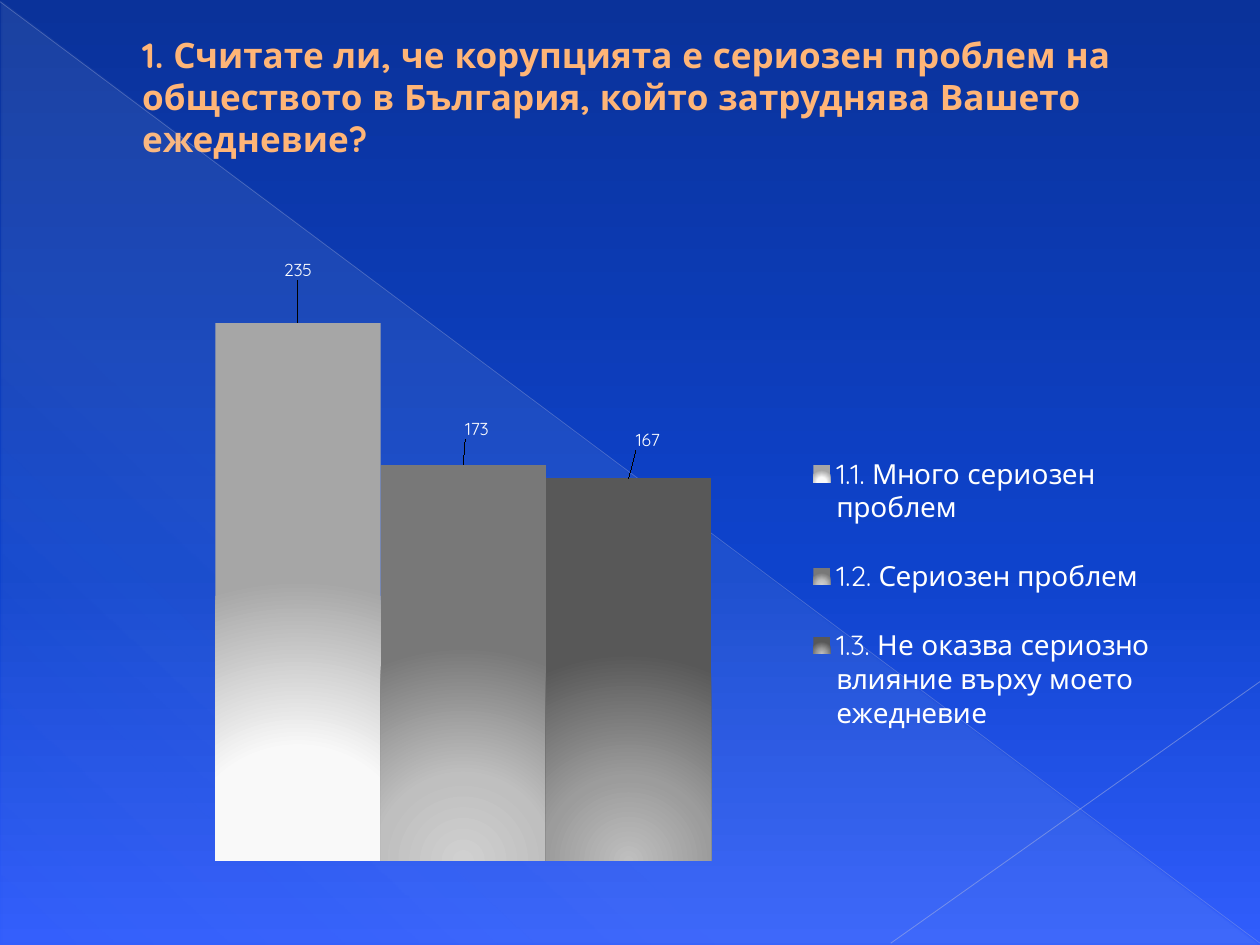
from lxml import etree
from pptx import Presentation
from pptx.chart import data as chart_data
from pptx.dml import color as dml
from pptx.enum import chart as chart_enum, shapes, text
from pptx.oxml import parse_xml
from pptx.oxml.ns import nsdecls, qn
from pptx.util import Pt

FONT = "Quicksand"
COLORS = {
    "title": "FFB577",
    "text": "FFFFFF",
    "glow": "CCDDEA",
    "long_line": "ADB6DC",
    "short_line": "B7BEDF",
}
BACKGROUND = [(0, "0A329A", 100), (60, "0E43CC", 100), (100, "315DFC", 100)]
GLOW = [(0, COLORS["glow"], 10), (70, COLORS["glow"], 8), (100, COLORS["glow"], 1)]
QUESTION = (
    "1.\u00a0Считате ли, че корупцията е сериозен проблем на обществото "
    "в България, който затруднява Вашето ежедневие?"
)
# name, value, gradient colours from the foot upwards, label shift (x, y)
ANSWERS = [
    ("1.1. Много сериозен проблем", 235, ("F9F9F9", "F9F9F9", "A6A6A6"), (0, -0.06)),
    ("1.2. Сериозен проблем", 173, ("D0D0D0", "BFBFBF", "787878"), (0.012, -0.033)),
    ("1.3. Не оказва сериозно влияние върху моето ежедневие", 167,
     ("BFBFBF", "9C9C9C", "585858"), (0.017, -0.037)),
]


def rgb(hex_color):
    return dml.RGBColor.from_string(hex_color)


def set_gradient(fill, element, stops, angle=None):
    """Fill with (position, colour, opacity) stops; radial from the foot without an angle."""
    fill.solid()
    solid = element.find(".//" + qn("a:solidFill"))
    stop_xml = "".join(
        f'<a:gs pos="{position * 1000}"><a:srgbClr val="{color}">'
        f'<a:alpha val="{opacity * 1000}"/></a:srgbClr></a:gs>'
        for position, color, opacity in stops
    )
    if angle is None:
        direction = ('<a:path path="circle"><a:fillToRect l="50000" t="100000" '
                     'r="50000" b="0"/></a:path>')
    else:
        direction = f'<a:lin ang="{angle * 60000}" scaled="0"/>'
    gradient = parse_xml(
        f'<a:gradFill {nsdecls("a")} rotWithShape="1"><a:gsLst>{stop_xml}</a:gsLst>'
        f"{direction}</a:gradFill>"
    )
    solid.getparent().replace(solid, gradient)


def manual_layout(x, y, width=None, height=None, inner=False, edge=True):
    """Chart layout in fractions; without edge, x and y shift the default place."""
    parts = [("layoutTarget", "inner")] if inner else []
    if edge:
        parts += [("xMode", "edge"), ("yMode", "edge")]
    parts += [("x", x), ("y", y)]
    if width is not None:
        parts += [("w", width), ("h", height)]
    body = "".join(f'<c:{name} val="{value}"/>' for name, value in parts)
    return parse_xml(
        f'<c:layout {nsdecls("c")}><c:manualLayout>{body}</c:manualLayout></c:layout>'
    )


def add_thin_line(slide, start, end, color, width, opacity):
    line = slide.shapes.add_connector(
        shapes.MSO_CONNECTOR.STRAIGHT, *[Pt(value) for value in (*start, *end)]
    )
    line.line.color.rgb = rgb(color)
    line.line.width = Pt(width)
    properties = line._element.spPr
    alpha = etree.SubElement(properties.find(".//" + qn("a:srgbClr")), qn("a:alpha"))
    alpha.set("val", str(opacity * 1000))
    etree.SubElement(properties, qn("a:effectLst"))


def add_backdrop(slide, left, top, width, height):
    set_gradient(slide.background.fill, slide.element, BACKGROUND, 90)
    triangle = slide.shapes.add_shape(
        shapes.MSO_SHAPE.RIGHT_TRIANGLE,
        Pt(left + 1), Pt(top + 1), Pt(width - 2), Pt(height - 1),
    )
    triangle.shadow.inherit = False
    triangle.line.fill.background()
    set_gradient(triangle.fill, triangle._element, GLOW, 133)
    right, bottom = left + width, top + height
    add_thin_line(slide, (left, top + 1), (right, bottom - 1),
                  COLORS["long_line"], 0.39, 35)
    add_thin_line(slide, (right, top + 389.5), (left + 509, bottom - 1),
                  COLORS["short_line"], 0.47, 45)


def place_title(slide, left, top, width, height):
    title = slide.shapes.title
    title.left, title.top = Pt(left), Pt(top)
    title.width, title.height = Pt(width), Pt(height)
    frame = title.text_frame
    frame.text = QUESTION
    frame.word_wrap = True
    frame.auto_size = text.MSO_AUTO_SIZE.NONE
    frame.vertical_anchor = text.MSO_ANCHOR.MIDDLE
    paragraph = frame.paragraphs[0]
    paragraph.alignment = text.PP_ALIGN.LEFT
    indents = paragraph._p.get_or_add_pPr()
    indents.set("marL", str(Pt(38)))
    indents.set("indent", "0")
    font = paragraph.runs[0].font
    font.name, font.size, font.bold = FONT, Pt(20), True
    font.color.rgb = rgb(COLORS["title"])


def style_font(font, size):
    font.name, font.size = FONT, Pt(size)
    font.color.rgb = rgb(COLORS["text"])


def style_series(series, colors, label_shift):
    stops = [(position, color, 100) for position, color in zip((0, 40, 100), colors)]
    set_gradient(series.format.fill, series._element, stops)
    series.format.line.fill.background()
    series.invert_if_negative = False
    series.data_labels.show_value = True
    series.points[0].data_label.position = chart_enum.XL_LABEL_POSITION.OUTSIDE_END
    label = series._element.find(".//" + qn("c:dLbl"))
    label.find(qn("c:idx")).addnext(manual_layout(*label_shift, edge=False))


def add_answer_chart(slide, left, top, width, height):
    answers = chart_data.CategoryChartData()
    answers.categories = ["1"]
    for name, value, _, _ in ANSWERS:
        answers.add_series(name, [value])
    chart = slide.shapes.add_chart(
        chart_enum.XL_CHART_TYPE.COLUMN_CLUSTERED,
        Pt(left), Pt(top), Pt(width), Pt(height), answers,
    ).chart
    chart.has_title = False
    style_font(chart.font, 10)

    chart.category_axis.visible = False
    value_axis = chart.value_axis
    value_axis.visible = False
    value_axis.has_major_gridlines = False
    value_axis.minimum_scale, value_axis.maximum_scale = 0, 250

    plot = chart.plots[0]
    plot.gap_width, plot.overlap = 150, 0
    plot.vary_by_categories = False
    for series, (_, _, colors, label_shift) in zip(plot.series, ANSWERS):
        style_series(series, colors, label_shift)

    plot_area = chart._chartSpace.find(".//" + qn("c:plotArea"))
    for layout in plot_area.findall(qn("c:layout")):
        plot_area.remove(layout)
    plot_area.insert(0, manual_layout(0.025, 0.036, 0.656, 0.918, inner=True))

    chart.has_legend = True
    legend = chart.legend
    legend.position = chart_enum.XL_LEGEND_POSITION.TOP
    legend.include_in_layout = False
    style_font(legend.font, 16)
    for layout in legend._element.findall(qn("c:layout")):
        legend._element.remove(layout)
    legend._element.find(qn("c:legendPos")).addnext(
        manual_layout(0.65, 0.25, 0.32, 0.55)
    )


def main():
    presentation = Presentation()
    presentation.slide_width, presentation.slide_height = Pt(720), Pt(540)
    slide = presentation.slides.add_slide(presentation.slide_layouts[5])
    add_backdrop(slide, 0, 0, 720, 540)
    place_title(slide, 36, 21.6, 648, 67)
    add_answer_chart(slide, 36, 148.3, 648, 360)
    presentation.save("out.pptx")


if __name__ == "__main__":
    main()
